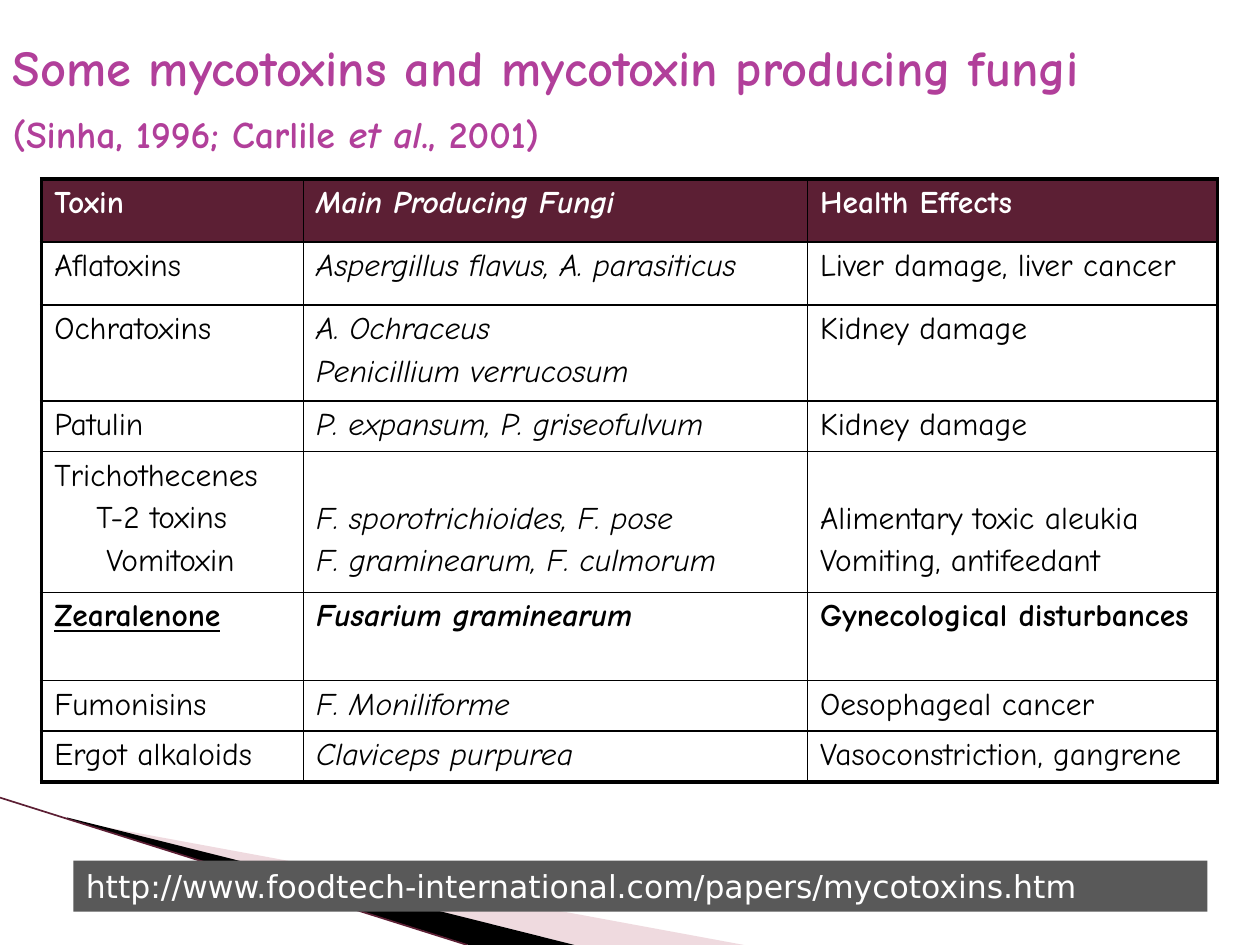
from lxml import etree
from pptx import Presentation
from pptx.dml.color import RGBColor
from pptx.enum.shapes import MSO_CONNECTOR, MSO_SHAPE
from pptx.enum.text import MSO_ANCHOR, PP_ALIGN
from pptx.oxml.ns import qn
from pptx.util import Cm, Pt

LINE = MSO_CONNECTOR.STRAIGHT
RECT = MSO_SHAPE.RECTANGLE
MIDDLE, BOTTOM = MSO_ANCHOR.MIDDLE, MSO_ANCHOR.BOTTOM
LEFT = PP_ALIGN.LEFT

BLACK = RGBColor(0x00, 0x00, 0x00)
WHITE = RGBColor(0xFF, 0xFF, 0xFF)
PURPLE = RGBColor(0xB1, 0x3F, 0x9A)
WINE = RGBColor(0x5C, 0x1F, 0x34)
PINK = RGBColor(0xD8, 0xA3, 0xAF)
ROSE = RGBColor(0xD3, 0x9A, 0xA8)
GREY = RGBColor(0x59, 0x59, 0x59)
COMIC, SANS = "Comic Neue", "DejaVu Sans"


def style(run, name, size, color, bold=False, italic=False):
    font = run.font
    font.name, font.size = name, Pt(size)
    font.bold, font.italic = bold, italic
    font.color.rgb = color


def border(cell, side, width):
    props = cell._tc.get_or_add_tcPr()
    line = etree.SubElement(props, qn("a:ln" + side), w=str(Pt(width)))
    fill = etree.SubElement(line, qn("a:solidFill"))
    etree.SubElement(fill, qn("a:srgbClr"), val=str(BLACK))


prs = Presentation()
prs.slide_width, prs.slide_height = Cm(25.4), Cm(19.05)
slide = prs.slides.add_slide(prs.slide_layouts[5])
shapes = slide.shapes

# Swoosh in the lower left corner
wedges = [
    (PINK, [(1.4, 16.54), (15.0, 19.05), (11.58, 19.05), (1.4, 16.51)]),
    (BLACK, [(1.35, 16.48), (11.58, 19.05), (9.45, 19.05), (1.37, 16.51)]),
]
for color, points in wedges:
    start, *rest = [(Cm(x), Cm(y)) for x, y in points]
    pen = shapes.build_freeform(*start)
    pen.add_line_segments(rest)
    wedge = pen.convert_to_shape()
    wedge.shadow.inherit = False
    wedge.line.fill.background()
    wedge.fill.solid()
    wedge.fill.fore_color.rgb = color
    if color == PINK:
        tint = wedge._element.spPr.find(".//" + qn("a:srgbClr"))
        etree.SubElement(tint, qn("a:alpha"), val="40000")

edge = shapes.add_connector(LINE, Cm(0), Cm(16.08), Cm(9.42), Cm(19.05))
edge.line.color.rgb = WINE
edge.line.width = Pt(0.95)
etree.SubElement(edge._element.spPr, qn("a:effectLst"))

# Title with its citation line
title = shapes.title
title.left, title.top, title.width, title.height = Cm(0), Cm(0.3), Cm(25.4), Cm(3.5)
frame = title.text_frame
frame.word_wrap = True
frame.vertical_anchor = MIDDLE
frame.text = "Some mycotoxins and mycotoxin producing fungi"
cite = frame.add_paragraph()
for text in ("(Sinha, 1996; Carlile ", "et al", "., 2001)"):
    cite.add_run().text = text
cite.space_before = Pt(13)
for para, size in zip(frame.paragraphs, (28.8, 21.6)):
    para.alignment = LEFT
    para.line_spacing = 0.8
    for run in para.runs:
        style(run, COMIC, size, PURPLE, True, run.text == "et al")

# Link bar
bar = shapes.add_shape(RECT, Cm(1.48), Cm(17.35), Cm(22.86), Cm(1.03))
bar.shadow.inherit = False
bar.fill.solid()
bar.fill.fore_color.rgb = GREY
bar.line.fill.background()
bar.text_frame.text = "http://www.foodtech-international.com/papers/mycotoxins.htm"
bar.text_frame.word_wrap = True
bar.text_frame.vertical_anchor = MIDDLE
link = bar.text_frame.paragraphs[0]
link.alignment = LEFT
style(link.runs[0], SANS, 18, WHITE)

# Table of toxins: row height, then the three cells
rows = [
    (1.27, "Toxin", "Main Producing Fungi", "Health Effects"),
    (1.27, "Aflatoxins", "Aspergillus flavus, A. parasiticus", "Liver damage, liver cancer"),
    (1.93, "Ochratoxins", "A. Ochraceus\nPenicillium verrucosum", "Kidney damage"),
    (1.02, "Patulin", "P. expansum, P. griseofulvum", "Kidney damage"),
    (2.84, "Trichothecenes\nT-2 toxins\nVomitoxin",
     "F. sporotrichioides, F. pose\nF. graminearum, F. culmorum",
     "Alimentary toxic aleukia\nVomiting, antifeedant"),
    (1.78, "Zearalenone", "Fusarium graminearum", "Gynecological disturbances"),
    (1.02, "Fumonisins", "F. Moniliforme", "Oesophageal cancer"),
    (1.02, "Ergot alkaloids", "Claviceps purpurea", "Vasoconstriction, gangrene"),
]
widths = (5.28, 10.16, 8.26)
indents = {"T-2 toxins": 0.85, "Vomitoxin": 1.05}
THICK, THIN = 2.25, 1
last = len(rows) - 1

table = shapes.add_table(len(rows), 3, Cm(0.84), Cm(3.61), Cm(23.7), Cm(12.15)).table
table.first_row = table.horz_banding = False
for col, width in zip(table.columns, widths):
    col.width = Cm(width)

for r, (height, *texts) in enumerate(rows):
    table.rows[r].height = Cm(height)
    head, strong = r == 0, texts[0] in ("Toxin", "Zearalenone")
    for c, text in enumerate(texts):
        cell = table.cell(r, c)
        cell.text_frame.text = text
        for n, para in enumerate(cell.text_frame.paragraphs):
            if n:
                para.space_before = Pt(3.6)
            if para.text in indents:
                props = para._p.get_or_add_pPr()
                props.set("marL", str(Cm(indents[para.text])))
            run = para.runs[0]
            style(run, COMIC, 18, WHITE if head else BLACK, strong, c == 1)
            run.font.underline = para.text == "Zearalenone"
        # The lower two lines stand beside the sub-toxins
        if texts[0].startswith("Tricho") and c > 0:
            cell.vertical_anchor = BOTTOM
            cell.margin_bottom = Cm(0.25)
        outer = (("L", c == 0), ("R", c == 2), ("T", head), ("B", r == last))
        for side, rim in outer:
            border(cell, side, THICK if rim else THIN)
        if head:
            cell.fill.solid()
            cell.fill.fore_color.rgb = WINE
        else:
            cell.fill.background()

prs.save("out.pptx")
